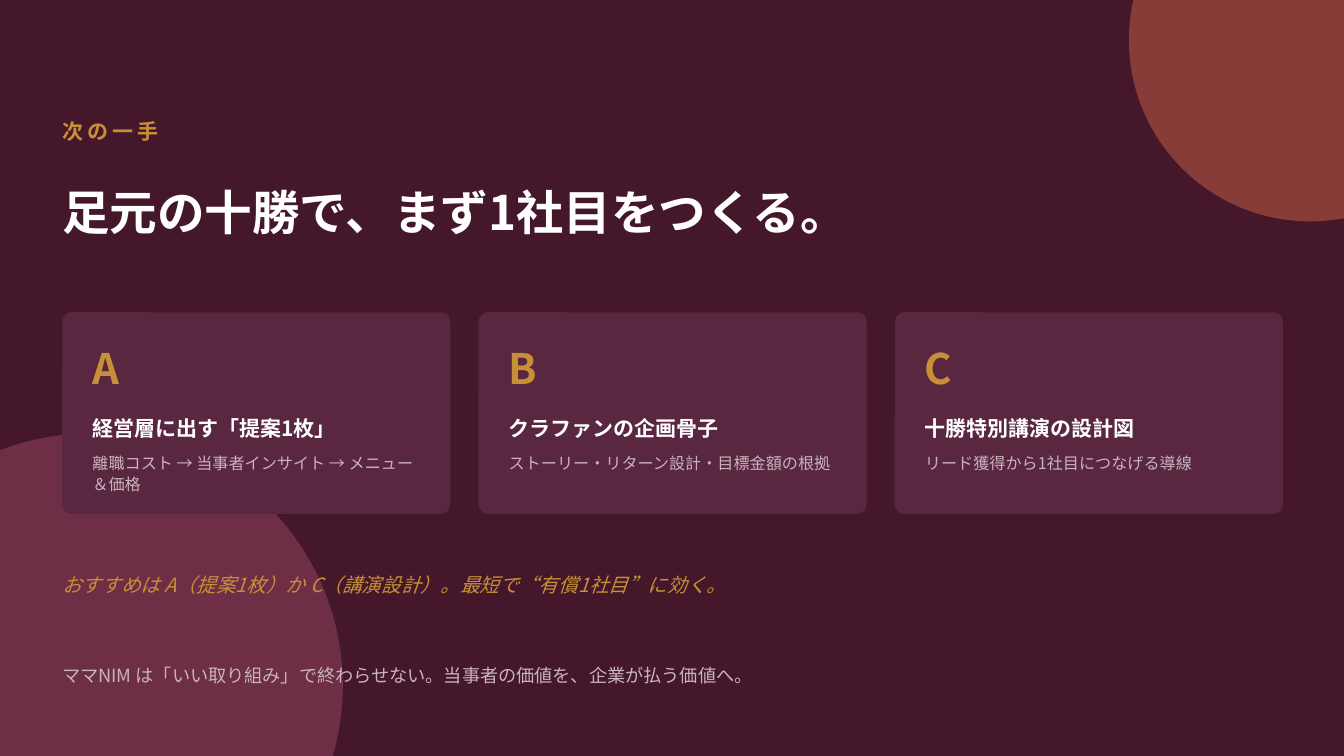
from lxml.etree import SubElement
from pptx import Presentation
from pptx.dml.color import RGBColor
from pptx.enum.shapes import MSO_SHAPE
from pptx.enum.text import MSO_ANCHOR
from pptx.oxml.ns import qn
from pptx.util import Cm, Pt

FONT = "Noto Sans CJK JP"
HUES = {
    "night": "44182A",
    "plum": "6D2E46",
    "coral": "D9694A",
    "card": "5A2740",
    "gold": "C79038",
    "white": "FFFFFF",
    "mist": "C9B3BC",
}
WIDE, HIGH = 33.87, 19.05
LEFT = 1.57
CARD_W, CARD_H, GAP = 9.78, 5.08, 0.71
PAD = 0.76
CARDS = [
    ("A", "経営層に出す「提案1枚」", "離職コスト → 当事者インサイト → メニュー＆価格"),
    ("B", "クラファンの企画骨子", "ストーリー・リターン設計・目標金額の根拠"),
    ("C", "十勝特別講演の設計図", "リード獲得から1社目につなげる導線"),
]


def hue(name):
    return RGBColor.from_string(HUES[name])


def add_form(slide, kind, box, fill):
    form = slide.shapes.add_shape(kind, *[Cm(n) for n in box])
    form.shadow.inherit = False
    form.fill.solid()
    form.fill.fore_color.rgb = hue(fill)
    form.line.fill.background()
    return form


def add_text(slide, box, text, size, color, bold=False, slant=False,
             anchor=MSO_ANCHOR.MIDDLE, lead=None, track=None):
    frame = slide.shapes.add_textbox(*[Cm(n) for n in box]).text_frame
    frame.word_wrap = True
    frame.margin_left = frame.margin_right = 0
    frame.margin_top = frame.margin_bottom = 0
    frame.vertical_anchor = anchor
    frame.text = text
    para = frame.paragraphs[0]
    if lead:
        para.line_spacing = lead
    run = para.runs[0]
    font = run.font
    font.size = Pt(size)
    font.bold = bold
    font.italic = slant
    font.color.rgb = hue(color)
    font.name = FONT
    props = run._r.get_or_add_rPr()
    SubElement(props, qn("a:ea")).set("typeface", FONT)
    if track:
        props.set("spc", str(track * 100))


def add_discs(slide):
    add_form(slide, MSO_SHAPE.OVAL, (-4.06, 10.92, 12.7, 12.7), "plum")
    disc = add_form(slide, MSO_SHAPE.OVAL, (28.45, -3.56, 9.14, 9.14), "coral")
    tint = disc._element.spPr.find(qn("a:solidFill"))[0]
    SubElement(tint, qn("a:alpha")).set("val", "45000")


def add_head(slide, left, top, width):
    add_text(slide, (left, top, width, 1.02), "次の一手", 15, "gold",
             bold=True, track=3)
    add_text(slide, (left, top + 1.27, width, 2.54),
             "足元の十勝で、まず1社目をつくる。", 34, "white", bold=True)


def add_card(slide, left, top, width, height, parts):
    mark, title, note = parts
    card = add_form(slide, MSO_SHAPE.ROUNDED_RECTANGLE,
                    (left, top, width, height), "card")
    card.adjustments[0] = 0.045
    inner = left + PAD
    room = width - 2 * PAD
    add_text(slide, (inner, top + 0.64, 2.03, 1.52), mark, 30, "gold", bold=True)
    add_text(slide, (inner, top + 2.29, room, 1.27), title, 15, "white", bold=True)
    add_text(slide, (inner, top + 3.51, room, 1.4), note, 11.5, "mist",
             anchor=MSO_ANCHOR.TOP, lead=1.1)


def add_foot(slide, left, top, width):
    add_text(slide, (left, top, width, 1.27),
             "おすすめは A（提案1枚）か C（講演設計）。最短で“有償1社目”に効く。",
             14, "gold", slant=True)
    add_text(slide, (left, top + 2.28, width, 1.27),
             "ママNIM は「いい取り組み」で終わらせない。当事者の価値を、企業が払う価値へ。",
             13, "mist")


def main():
    deck = Presentation()
    deck.slide_width, deck.slide_height = Cm(WIDE), Cm(HIGH)
    slide = deck.slides.add_slide(deck.slide_layouts[6])
    back = slide.background.fill
    back.solid()
    back.fore_color.rgb = hue("night")
    add_discs(slide)
    add_head(slide, LEFT, 2.79, 30.48)
    for i, parts in enumerate(CARDS):
        add_card(slide, LEFT + i * (CARD_W + GAP), 7.87, CARD_W, CARD_H, parts)
    add_foot(slide, LEFT, 14.1, 30.48)
    deck.save("out.pptx")


if __name__ == "__main__":
    main()
